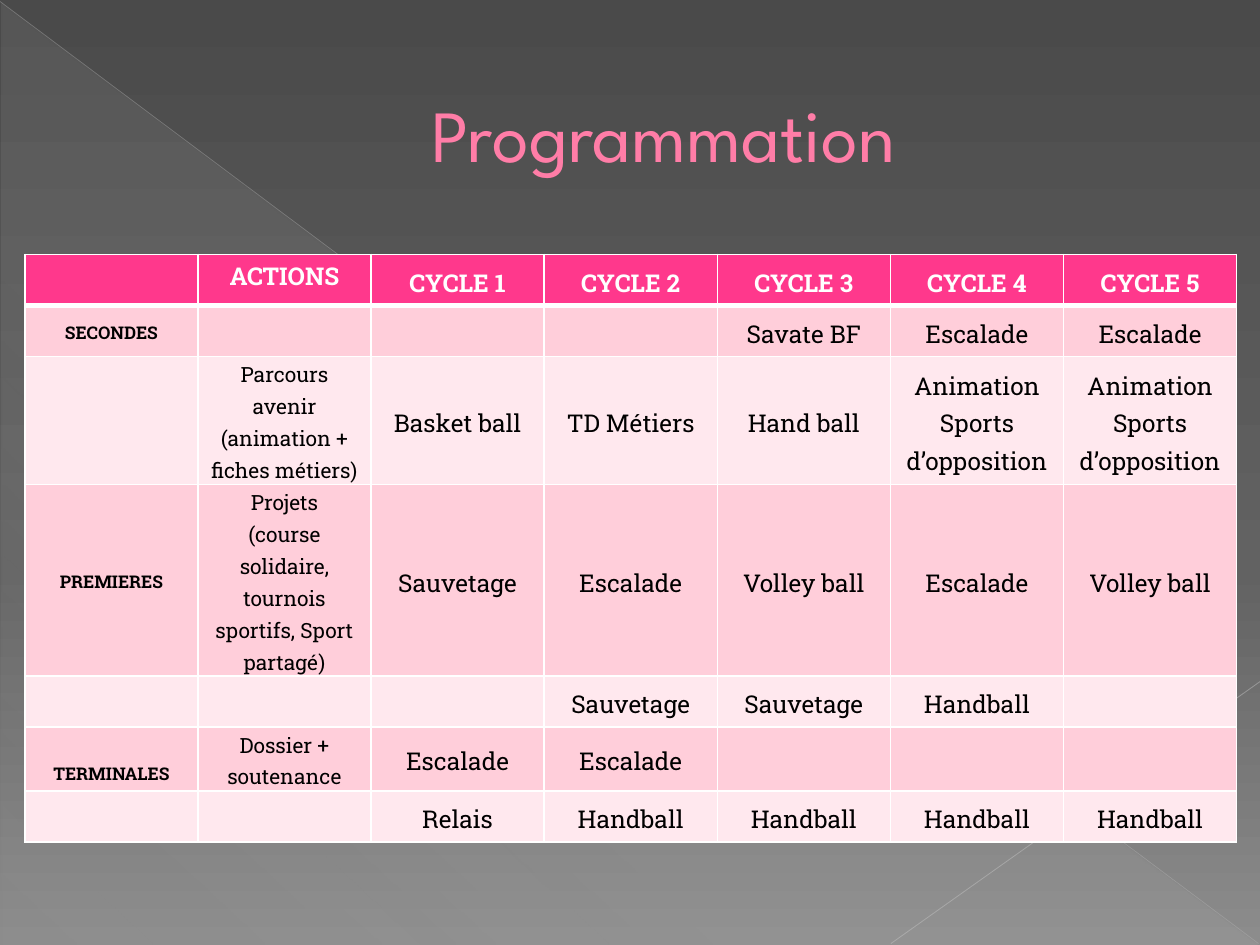
from dataclasses import dataclass

from lxml import etree
from pptx import Presentation
from pptx.dml.color import RGBColor
from pptx.enum import shapes, text
from pptx.oxml import ns
from pptx.util import Cm, Pt

WHITE = RGBColor(0xFF, 0xFF, 0xFF)
BLACK = RGBColor(0, 0, 0)
TITLE_PINK = RGBColor(0xFF, 0x7D, 0xA7)
TITLE_OUTLINE = RGBColor(0xB1, 0x27, 0x61)
HEADER_PINK = RGBColor(0xFF, 0x38, 0x8C)
BAND_DARK = RGBColor(0xFF, 0xCE, 0xDA)
BAND_LIGHT = RGBColor(0xFF, 0xE8, 0xEE)
LIGHT_GREY = RGBColor(0xD2, 0xD2, 0xD2)
TITLE_FONT = "League Spartan"
TABLE_FONT = "Roboto Slab"

COLUMN_WIDTH = Cm(3.49)
ROW_HEIGHTS = [1.03, 1.03, 2.58, 3.83, 1.03, 1.29, 1.03]
PARCOURS = "Parcours avenir\n(animation + fiches métiers)"
PROJETS = "Projets\n(course solidaire, tournois sportifs, Sport partagé)"
OPPOSITION = "Animation\nSports d’opposition"
ROWS = [
    ["", "ACTIONS", "CYCLE 1", "CYCLE 2", "CYCLE 3", "CYCLE 4", "CYCLE 5"],
    ["SECONDES", "", "", "", "Savate BF", "Escalade", "Escalade"],
    ["", PARCOURS, "Basket ball", "TD Métiers", "Hand ball", OPPOSITION, OPPOSITION],
    ["PREMIERES", PROJETS, "Sauvetage", "Escalade", "Volley ball", "Escalade", "Volley ball"],
    ["", "", "", "Sauvetage", "Sauvetage", "Handball", ""],
    ["TERMINALES", "Dossier + soutenance", "Escalade", "Escalade", "", "", ""],
    ["", "", "Relais", "Handball", "Handball", "Handball", "Handball"],
]


@dataclass
class Stop:
    position: int
    color: RGBColor
    opacity: int = 100


@dataclass
class Diagonal:
    start: tuple[float, float]
    end: tuple[float, float]
    color: RGBColor
    width: float
    opacity: int


BACKGROUND_STOPS = [
    Stop(0, RGBColor(0x4A, 0x4A, 0x4A)),
    Stop(60, RGBColor(0x62, 0x62, 0x62)),
    Stop(100, RGBColor(0x8C, 0x8C, 0x8C)),
]
TRIANGLE_STOPS = [Stop(0, LIGHT_GREY, 10), Stop(70, LIGHT_GREY, 8), Stop(100, LIGHT_GREY, 1)]
DIAGONALS = [
    Diagonal((0, 0.03), (25.37, 19.02), RGBColor(0xBF, 0xBF, 0xBF), 0.39, 35),
    Diagonal((25.4, 13.74), (17.96, 19.02), RGBColor(0xC6, 0xC6, 0xC6), 0.47, 45),
]


def add_child(parent, tag: str, **attributes):
    child = etree.SubElement(parent, ns.qn(tag))
    for name, value in attributes.items():
        child.set(name, str(value))
    return child


def add_color(parent, color: RGBColor, opacity: int = 100) -> None:
    element = add_child(parent, "a:srgbClr", val=color)
    if opacity < 100:
        add_child(element, "a:alpha", val=opacity * 1000)


def replace_solid_fill(properties, stops: list[Stop], angle: int) -> None:
    """Swap the solid fill of a properties element for a linear gradient."""
    gradient = etree.Element(ns.qn("a:gradFill"), rotWithShape="1")
    stop_list = add_child(gradient, "a:gsLst")
    for stop in stops:
        element = add_child(stop_list, "a:gs", pos=stop.position * 1000)
        add_color(element, stop.color, stop.opacity)
    add_child(gradient, "a:lin", ang=angle * 60000, scaled=0)
    properties.replace(properties.find(ns.qn("a:solidFill")), gradient)


def add_backdrop(slide) -> None:
    slide.background.fill.solid()
    replace_solid_fill(slide.element.cSld.get_or_add_bgPr(), BACKGROUND_STOPS, 90)
    triangle = slide.shapes.add_shape(
        shapes.MSO_SHAPE.RIGHT_TRIANGLE, Cm(0.03), Cm(0.05), Cm(25.35), Cm(19)
    )
    triangle.shadow.inherit = False
    triangle.line.fill.background()
    triangle.fill.solid()
    replace_solid_fill(triangle.element.spPr, TRIANGLE_STOPS, 133)
    for diagonal in DIAGONALS:
        add_diagonal(slide, diagonal)


def add_diagonal(slide, diagonal: Diagonal) -> None:
    points = [Cm(value) for value in diagonal.start + diagonal.end]
    connector = slide.shapes.add_connector(shapes.MSO_CONNECTOR.STRAIGHT, *points)
    connector.line.width = Pt(diagonal.width)
    connector.line.color.rgb = diagonal.color
    properties = connector.element.spPr
    color = properties.find(".//" + ns.qn("a:srgbClr"))
    add_child(color, "a:alpha", val=diagonal.opacity * 1000)
    add_child(properties, "a:effectLst")


def format_title(slide) -> None:
    title = slide.shapes.title
    slide.shapes.element.append(title.element)  # in front of the backdrop
    title.left, title.top, title.width, title.height = Cm(1.27), Cm(0.74), Cm(22.86), Cm(3.89)
    title.text_frame.text = "Programmation"
    title.text_frame.vertical_anchor = text.MSO_ANCHOR.MIDDLE
    paragraph = title.text_frame.paragraphs[0]
    paragraph.alignment = text.PP_ALIGN.CENTER
    properties = paragraph._p.get_or_add_pPr()
    properties.set("marL", str(Cm(1.35)))
    properties.set("indent", "0")
    run = paragraph.runs[0]
    outline = add_child(run._r.get_or_add_rPr(), "a:ln", w=Pt(0.5))
    add_color(add_child(outline, "a:solidFill"), TITLE_OUTLINE)
    run.font.name = TITLE_FONT
    run.font.size = Pt(42)
    run.font.color.rgb = TITLE_PINK


def set_borders(cell, top: float, bottom: float) -> None:
    properties = cell._tc.get_or_add_tcPr()
    for side, width in {"L": 1, "R": 1, "T": top, "B": bottom}.items():
        border = add_child(properties, f"a:ln{side}", w=Pt(width))
        add_color(add_child(border, "a:solidFill"), WHITE)


def format_cell(cell, row: int, column: int) -> None:
    header = row == 0
    set_borders(cell, top=3 if row == 1 else 1, bottom=3 if header else 1)
    cell.fill.solid()
    cell.fill.fore_color.rgb = HEADER_PINK if header else BAND_DARK if row % 2 else BAND_LIGHT
    if not cell.text_frame.text:
        return
    cell.margin_left = cell.margin_right = Cm(0.18)
    cell.margin_top = cell.margin_bottom = 0
    cell.vertical_anchor = text.MSO_ANCHOR.TOP if column == 1 else text.MSO_ANCHOR.MIDDLE
    size = 14 if header else {0: 10, 1: 12}.get(column, 14)
    for paragraph in cell.text_frame.paragraphs:
        paragraph.alignment = text.PP_ALIGN.CENTER
        paragraph.line_spacing = 1.15
        for run in paragraph.runs:
            run.font.name = TABLE_FONT
            run.font.size = Pt(size)
            run.font.bold = header or column == 0
            run.font.color.rgb = WHITE if header else BLACK


def add_programme_table(slide) -> None:
    column_count = len(ROWS[0])
    table = slide.shapes.add_table(
        len(ROWS), column_count, Cm(0.5), Cm(5.13),
        COLUMN_WIDTH * column_count, Cm(sum(ROW_HEIGHTS)),
    ).table
    for column in table.columns:
        column.width = COLUMN_WIDTH
    for row, (labels, height) in enumerate(zip(ROWS, ROW_HEIGHTS)):
        table.rows[row].height = Cm(height)
        for column, label in enumerate(labels):
            cell = table.cell(row, column)
            cell.text_frame.text = label
            format_cell(cell, row, column)
            if label == "TERMINALES":
                cell.margin_top = Cm(0.52)


def main() -> None:
    presentation = Presentation()
    presentation.slide_width, presentation.slide_height = Cm(25.4), Cm(19.05)
    slide = presentation.slides.add_slide(presentation.slide_layouts[5])
    add_backdrop(slide)
    format_title(slide)
    add_programme_table(slide)
    presentation.save("out.pptx")


if __name__ == "__main__":
    main()
